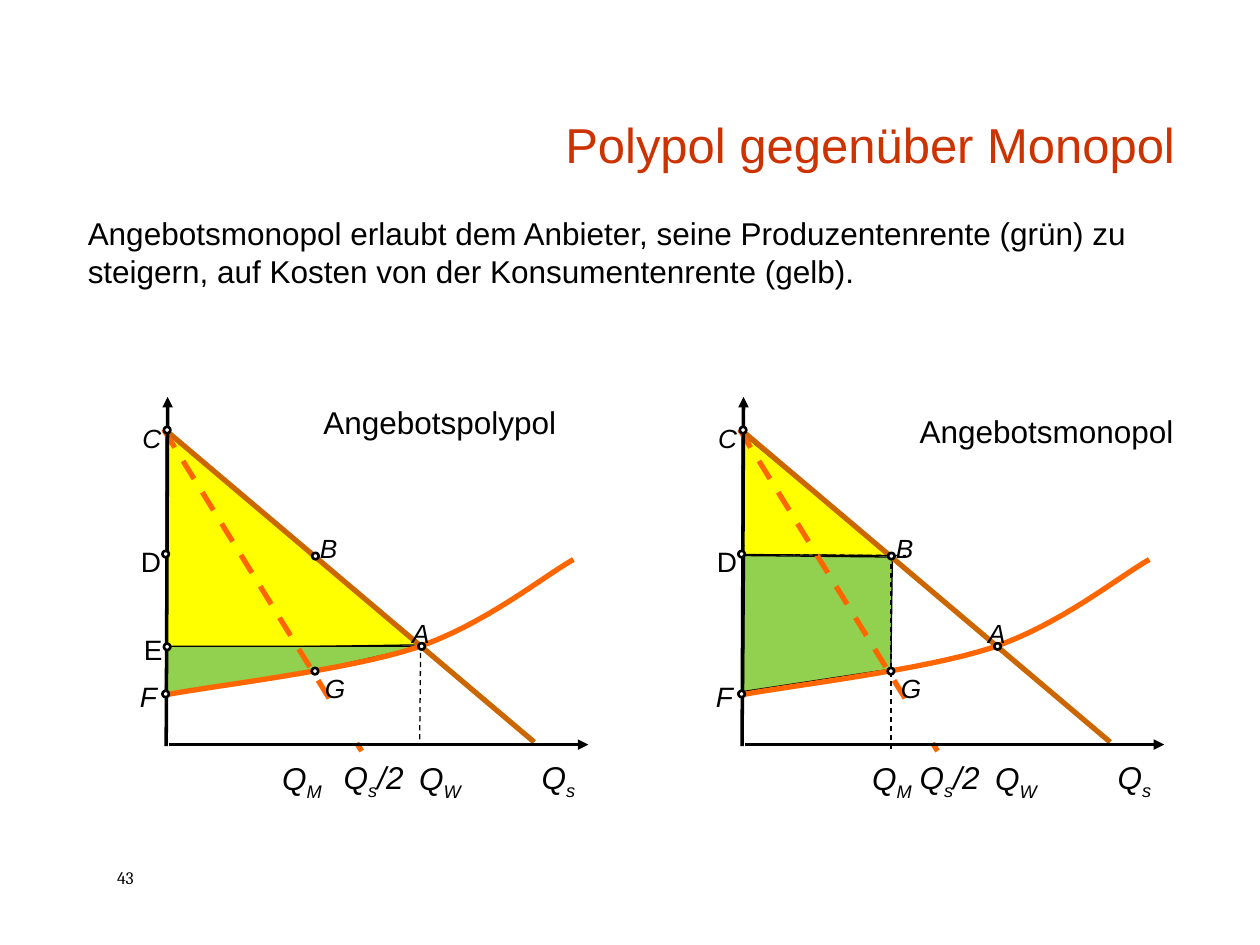
import pptx
import pptx.util
import pptx.dml.color
import pptx.enum.dml
import pptx.enum.shapes
import pptx.enum.text
import pptx.oxml.ns
from dataclasses import dataclass
from lxml import etree

Cm, Pt = pptx.util.Cm, pptx.util.Pt
SHAPE = pptx.enum.shapes.MSO_SHAPE
ALIGN = pptx.enum.text.PP_ALIGN
ANCHOR = pptx.enum.text.MSO_ANCHOR


@dataclass(frozen=True)
class Theme:
    font: str = "Arial"
    serif: str = "Cambria"
    ink: str = "000000"
    paper: str = "FFFFFF"
    title: str = "CC3300"
    demand: str = "CC6600"
    supply: str = "FF6600"
    buyer: str = "FFFF00"
    seller: str = "92D050"
    head: int = 28
    body: int = 18
    name: int = 16
    point: int = 15
    page: int = 10


class Board:
    def __init__(self, slide, theme):
        self.shapes = slide.shapes
        self.theme = theme
        self.dx = 0  # shift of the current panel, in cm

    def rgb(self, code):
        return pptx.dml.color.RGBColor.from_string(code)

    def paint(self, shape, fill=None, line=None, width=0.75):
        shape.shadow.inherit = False
        if fill:
            shape.fill.solid()
            shape.fill.fore_color.rgb = self.rgb(fill)
        else:
            shape.fill.background()
        if line:
            shape.line.color.rgb = self.rgb(line)
            shape.line.width = Pt(width)
        else:
            shape.line.fill.background()

    def text(self, box, runs, size, color=None, font=None, italic=False,
             align=ALIGN.LEFT, anchor=ANCHOR.TOP, tight=False, space=None):
        x, y, w, h = box
        frame = self.shapes.add_textbox(
            Cm(x + self.dx), Cm(y), Cm(w), Cm(h)).text_frame
        frame.word_wrap = not tight
        frame.vertical_anchor = anchor
        if tight:
            frame.margin_left = frame.margin_right = 0
            frame.margin_top = frame.margin_bottom = 0
        para = frame.paragraphs[0]
        para.alignment = align
        if space:
            para.line_spacing = space
        for words, base in runs:
            run = para.add_run()
            run.text = words
            run.font.name = font or self.theme.font
            run.font.size = Pt(size)
            run.font.italic = italic
            run.font.color.rgb = self.rgb(color or self.theme.ink)
            if base:
                run.font._element.set("baseline", str(base * 1000))

    def line(self, start, end, color, width, dash=False, arrow=False):
        (x1, y1), (x2, y2) = start, end
        link = self.shapes.add_connector(
            pptx.enum.shapes.MSO_CONNECTOR.STRAIGHT,
            Cm(x1 + self.dx), Cm(y1), Cm(x2 + self.dx), Cm(y2))
        link.line.color.rgb = self.rgb(color)
        link.line.width = Pt(width)
        if dash:
            link.line.dash_style = pptx.enum.dml.MSO_LINE.DASH
        qn = pptx.oxml.ns.qn
        if arrow:
            etree.SubElement(link.line._get_or_add_ln(), qn("a:tailEnd"),
                             type="triangle")
        etree.SubElement(link._element.spPr, qn("a:effectLst"))

    def outline(self, points, closed=True, **style):
        spots = [(Cm(x + self.dx), Cm(y)) for x, y in points]
        build = self.shapes.build_freeform(*spots[0])
        build.add_line_segments(spots[1:], close=closed)
        self.paint(build.convert_to_shape(), **style)

    def curve(self, points, color, width, steps=16):
        """Draw joined cubic curves: a start, then three points for each."""
        track = [points[0]]
        for i in range(0, len(points) - 1, 3):
            a, b, c, d = points[i:i + 4]
            for k in range(1, steps + 1):
                t = k / steps
                s = 1 - t
                track.append(tuple(
                    s**3 * p + 3 * s * s * t * q + 3 * s * t * t * r + t**3 * u
                    for p, q, r, u in zip(a, b, c, d)))
        self.outline(track, closed=False, line=color, width=width)

    def rect(self, x, y, w, h, fill):
        self.paint(self.shapes.add_shape(
            SHAPE.RECTANGLE, Cm(x + self.dx), Cm(y), Cm(w), Cm(h)), fill)

    def dot(self, x, y, size=0.13):
        mark = self.shapes.add_shape(
            SHAPE.OVAL, Cm(x + self.dx - size / 2), Cm(y - size / 2),
            Cm(size), Cm(size))
        self.paint(mark, self.theme.paper, self.theme.ink, 1.5)


# Point name: centre of dot, corner of label, italic
POINTS = {
    "F": ((3.34, 13.99), (2.82, 13.69), True),
    "C": ((3.37, 8.67), (2.87, 8.51), True),
    "D": ((3.34, 11.17), (2.84, 10.97), False),
    "E": ((3.37, 13.04), (2.9, 12.75), False),
    "B": ((6.36, 11.21), (6.45, 10.74), True),
    "A": ((8.5, 13.03), (8.31, 12.45), True),
    "G": ((6.35, 13.53), (6.55, 13.56), True),
}
SUPPLY = [(3.38, 14), (4.22, 13.84), (7.01, 13.51), (8.38, 13.06),
          (9.75, 12.6), (10.9, 11.66), (11.56, 11.28)]
# Each panel: shift, areas of rent, dashed guides, points, left of Q_M, caption
PANELS = [
    (0,
     [(3.35, 8.69), (8.46, 13), (3.35, 13.08)],
     [(3.38, 13.03), (8.51, 13.03), (6.38, 13.51), (3.33, 14)],
     [((8.43, 13.03), (3.35, 13.03)), ((8.48, 12.98), (8.46, 14.99))],
     "FCEDBAG", 5.44, ("Angebotspolypol", (6.27, 8, 5.26, 1.02))),
    (11.61,
     [(3.35, 8.74), (6.32, 11.2), (3.35, 11.18)],
     [(3.4, 11.2), (6.38, 11.23), (6.35, 13.49), (3.38, 13.94)],
     [((3.68, 11.18), (6.65, 11.2)), ((6.35, 11.18), (6.35, 15.09))],
     "FCDBAG", 5.72, ("Angebotsmonopol", (6.68, 8.18, 5.92, 1.02))),
]


def panel(board, shift, buyer, seller, guides, names, left, caption):
    look = board.theme
    board.dx = shift
    # Areas of rent
    board.outline(buyer, fill=look.buyer, line=look.ink)
    board.outline(seller, fill=look.seller, line=look.ink)
    # Demand, marginal revenue and axes
    board.line((3.3, 8.64), (10.77, 14.96), look.demand, 3)
    board.line((3.3, 8.66), (7.29, 15.14), look.supply, 3, dash=True)
    board.line((3.4, 15.01), (11.86, 15.01), look.ink, 2, arrow=True)
    board.line((3.35, 15.04), (3.38, 8), look.ink, 2, arrow=True)
    board.rect(6.71, 14.27, 2.49, 0.48, look.paper)
    # Guides, ticks and supply
    for start, end in guides:
        board.line(start, end, look.ink, 0.75, dash=True)
    board.line((6.3, 13.59), (6.3, 13.54), look.ink, 0.38)
    board.line((3.4, 11), (3.35, 11.02), look.ink, 0.38)
    board.curve(SUPPLY, look.supply, 3)
    # Named points
    for name in names:
        spot, (x, y), italic = POINTS[name]
        size = look.name if name in "DEF" else look.point
        board.text((x, y, 0.3, 0.5), [(name, 0)], size, italic=italic,
                   tight=True)
        board.dot(*spot)
    # Quantities below the axis
    for x, y, w, sub, rest in [(10.67, 14.81, 1.27, "s", ""),
                               (6.68, 14.81, 1.9, "s", "/2"),
                               (8.2, 14.83, 1.6, "W", ""),
                               (left, 14.83, 1.57, "M", "")]:
        runs = [("Q", 0), (sub, -25)] + ([(rest, 0)] if rest else [])
        board.text((x, y, w, 1.35), runs, look.body, italic=True, space=1.4)
    words, box = caption
    board.text(box, [(words, 0)], look.body)
    board.dx = 0


def main():
    deck = pptx.Presentation()
    deck.slide_width, deck.slide_height = Cm(25.4), Cm(19.05)
    look = Theme()
    board = Board(deck.slides.add_slide(deck.slide_layouts[6]), look)
    # Title, statement and page number
    board.text((5.31, 1.07, 18.62, 2.54), [("Polypol gegenüber Monopol", 0)],
               look.head, look.title, align=ALIGN.RIGHT, anchor=ANCHOR.BOTTOM)
    board.text((1.52, 4.19, 23.16, 1.8), [(
        "Angebotsmonopol erlaubt dem Anbieter, seine Produzentenrente (grün) "
        "zu steigern, auf Kosten von der Konsumentenrente (gelb).", 0)],
        look.body)
    board.text((2.11, 17.35, 1.7, 0.69), [("43", 0)], look.page,
               font=look.serif)
    # The two markets
    for parts in PANELS:
        panel(board, *parts)
    deck.save("out.pptx")


if __name__ == "__main__":
    main()
